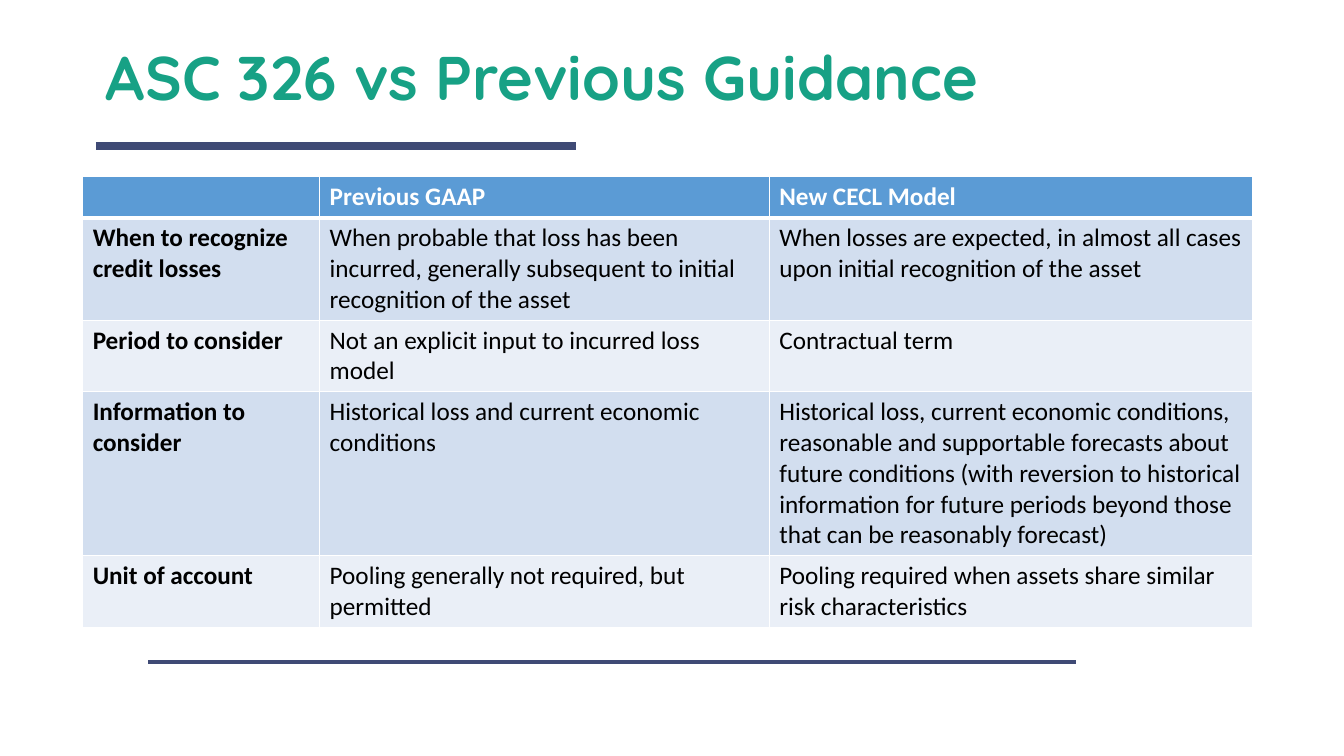
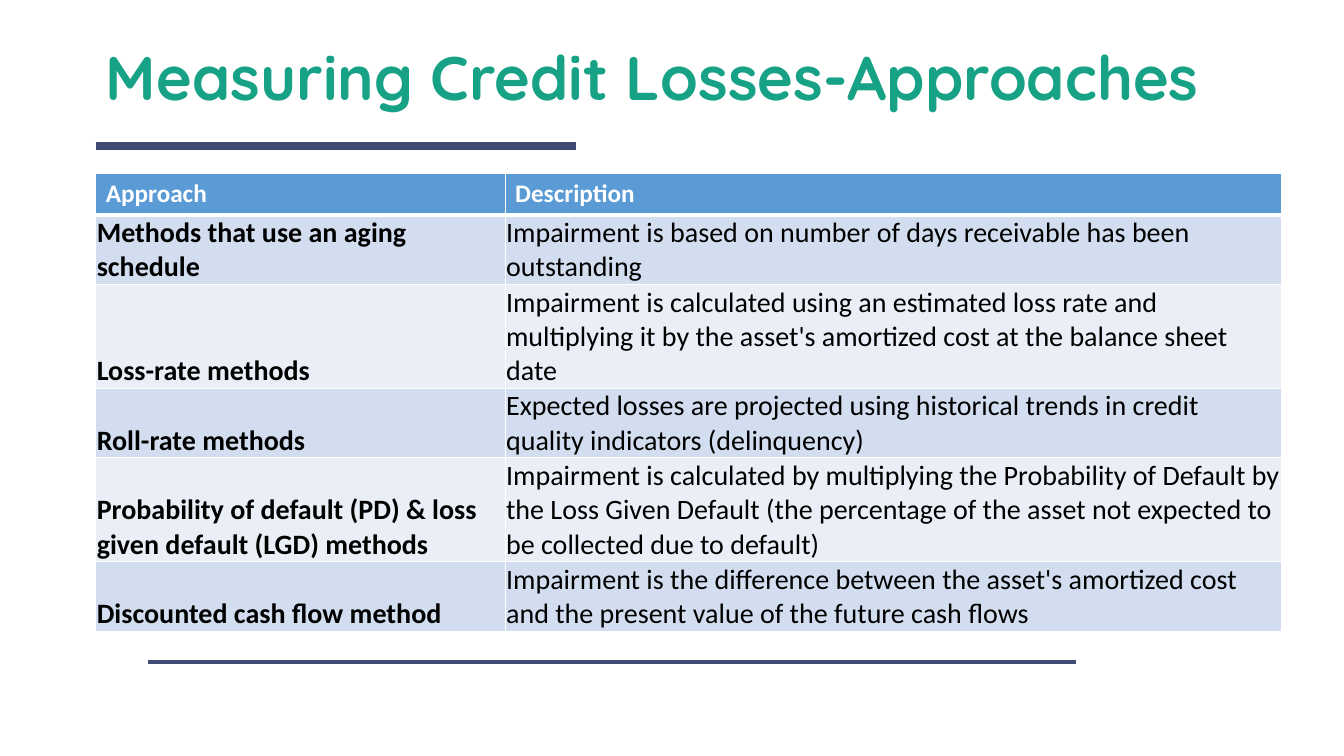
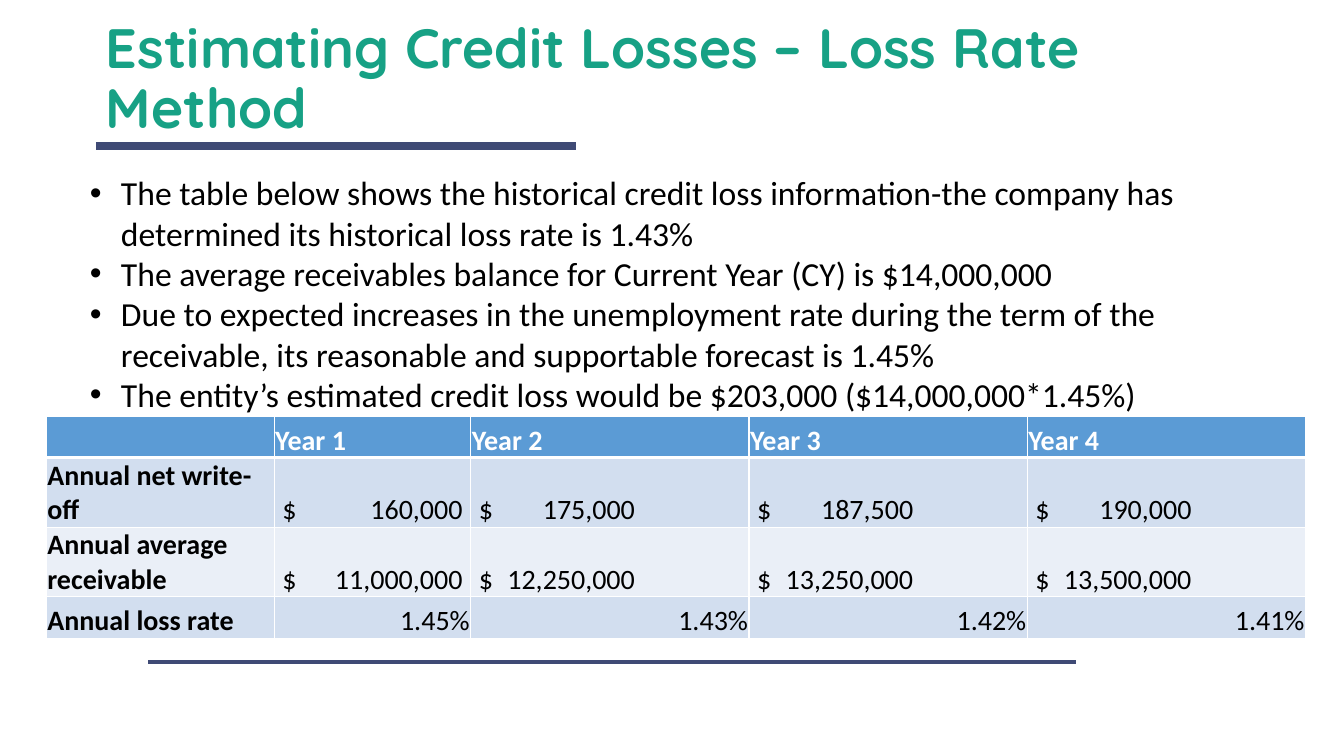
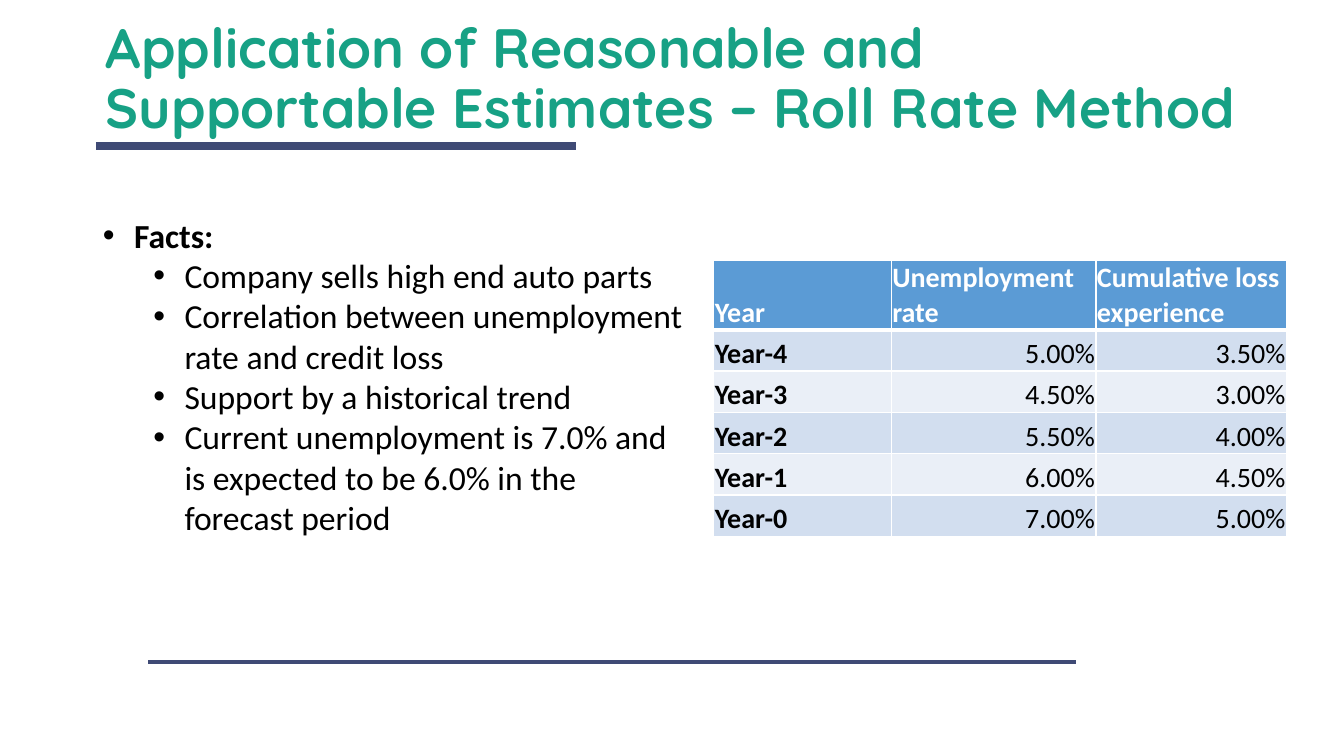
from dataclasses import dataclass

import pptx
import pptx.dml.color
import pptx.enum.shapes
import pptx.enum.text
import pptx.oxml
import pptx.oxml.ns
import pptx.util
from lxml import etree

Inches, Pt = pptx.util.Inches, pptx.util.Pt
PP_ALIGN, MSO_ANCHOR = pptx.enum.text.PP_ALIGN, pptx.enum.text.MSO_ANCHOR
qn = pptx.oxml.ns.qn

TITLE_ONLY, TITLE_AND_BODY = 5, 1


@dataclass(frozen=True)
class Theme:
    title_font: str = "Quicksand"
    body_font: str = "Calibri"
    title: str = "17A185"
    rule: str = "3F4A75"
    header: str = "5B9BD5"
    bands: tuple = ("D2DEEF", "EAEFF7")
    white: str = "FFFFFF"
    text: str = "000000"
    title_size: float = 44
    long_title_size: float = 39.6
    body_size: float = 24
    table_size: float = 20
    small_table_size: float = 18


def rgb(value):
    return pptx.dml.color.RGBColor.from_string(value)


def write(paragraph, text, *, size, font, color, bold=False, align=PP_ALIGN.LEFT):
    paragraph.alignment = align
    run = paragraph.add_run()
    run.text = text
    run.font.size = Pt(size)
    run.font.name = font
    run.font.bold = bold
    run.font.color.rgb = rgb(color)


def place(shape, left, top, width, height):
    shape.left, shape.top = Inches(left), Inches(top)
    shape.width, shape.height = Inches(width), Inches(height)


def add_bullet(paragraph, indent, hanging=0.31):
    properties = paragraph._p.get_or_add_pPr()
    properties.set("marL", str(Inches(indent)))
    properties.set("indent", str(-Inches(hanging)))
    etree.SubElement(properties, qn("a:buFont")).set("typeface", "Arial")
    etree.SubElement(properties, qn("a:buChar")).set("char", "•")


def add_right_tab(paragraph, position):
    tabs = etree.SubElement(paragraph._p.get_or_add_pPr(), qn("a:tabLst"))
    tab = etree.SubElement(tabs, qn("a:tab"))
    tab.set("pos", str(Inches(position)))
    tab.set("algn", "r")


def add_borders(cell, color, **widths):
    """Draw the cell edges; widths in points are keyed L, R, T and B."""
    properties = cell._tc.get_or_add_tcPr()
    for position, (edge, width) in enumerate(widths.items()):
        line = etree.Element(qn(f"a:ln{edge}"), w=str(Pt(width)))
        fill = etree.SubElement(line, qn("a:solidFill"))
        etree.SubElement(fill, qn("a:srgbClr")).set("val", color)
        properties.insert(position, line)


class Deck:
    """Holds the theme and the slide being built."""

    def __init__(self, theme):
        self.theme = theme
        self.presentation = pptx.Presentation()
        self.presentation.slide_width = Inches(13.33)
        self.presentation.slide_height = Inches(7.5)
        self.slide = None

    def start(self, title, layout=TITLE_ONLY, size=None):
        layouts = self.presentation.slide_layouts
        self.slide = self.presentation.slides.add_slide(layouts[layout])
        self.rule(0.95, 5.71, 1.45, 6)
        self.rule(1.47, 10.67, 6.57, 3)
        heading = self.slide.shapes.title
        place(heading, 0.95, 0.4, 11.47, 0.8)
        frame = heading.text_frame
        frame.auto_size = pptx.enum.text.MSO_AUTO_SIZE.NONE
        frame.vertical_anchor = MSO_ANCHOR.MIDDLE
        paragraph = frame.paragraphs[0]
        paragraph.line_spacing = 0.9
        write(paragraph, title, size=size or self.theme.title_size, bold=True,
              font=self.theme.title_font, color=self.theme.title)

    def rule(self, left, right, y, weight):
        line = self.slide.shapes.add_connector(
            pptx.enum.shapes.MSO_CONNECTOR.STRAIGHT,
            Inches(left), Inches(y), Inches(right), Inches(y))
        line.line.color.rgb = rgb(self.theme.rule)
        line.line.width = Pt(weight)
        etree.SubElement(line._element.spPr, qn("a:effectLst"))

    def bullets(self, box, items):
        """Fill the body placeholder with (level, text, bold) items."""
        body = self.slide.placeholders[1]
        place(body, *box)
        frame = body.text_frame
        frame.auto_size = pptx.enum.text.MSO_AUTO_SIZE.NONE
        frame.vertical_anchor = MSO_ANCHOR.TOP
        for index, (level, text, bold) in enumerate(items):
            paragraph = frame.add_paragraph() if index else frame.paragraphs[0]
            paragraph.level = level
            add_bullet(paragraph, 0.31 + 0.5 * level)
            paragraph.space_before = Pt(0)
            write(paragraph, text, size=self.theme.body_size, bold=bold,
                  font=self.theme.body_font, color=self.theme.text)

    def table(self, left, top, widths, rows, size=None, header_size=None,
              tight_from=0):
        """Add a banded table; rows from tight_from on have slim margins."""
        size = size or self.theme.table_size
        row_height = 0.41
        grid = self.slide.shapes.add_table(
            len(rows), len(widths), Inches(left), Inches(top),
            Inches(sum(widths)), Inches(row_height * len(rows))).table
        for column, width in zip(grid.columns, widths):
            column.width = Inches(width)
        for r, row in enumerate(rows):
            grid.rows[r].height = Inches(row_height)
            for c, text in enumerate(row):
                self.cell(grid.cell(r, c), text, r, c, widths[c],
                          size if r else header_size or size,
                          tight=r >= tight_from)

    def cell(self, cell, text, row, column, width, size, tight):
        theme = self.theme
        cell.fill.solid()
        cell.fill.fore_color.rgb = rgb(
            theme.bands[(row - 1) % 2] if row else theme.header)
        add_borders(cell, theme.white, L=1, R=1, T=3 if row == 1 else 1,
                    B=1 if row else 3)
        if not text:
            return
        paragraph = cell.text_frame.paragraphs[0]
        if tight:
            cell.vertical_anchor = MSO_ANCHOR.BOTTOM
            cell.margin_left = cell.margin_right = cell.margin_top = Inches(0.01)
            cell.margin_bottom = 0
        if text.startswith("$"):
            cell.margin_left = Inches(0.08)
            add_right_tab(paragraph, 1.79 if width < 2 else 1.55)
        write(paragraph, text, size=size, font=theme.body_font,
              color=theme.text if row else theme.white,
              bold=row == 0 or column == 0,
              align=PP_ALIGN.RIGHT if text.endswith("%") else PP_ALIGN.LEFT)


def main():
    theme = Theme()
    deck = Deck(theme)

    deck.start("ASC 326 vs Previous Guidance")
    deck.table(0.82, 1.75, [2.35, 4.46, 4.79], [
        ("", "Previous GAAP", "New CECL Model"),
        ("When to recognize credit losses",
         "When probable that loss has been incurred, generally subsequent to "
         "initial recognition of the asset",
         "When losses are expected, in almost all cases upon initial "
         "recognition of the asset"),
        ("Period to consider",
         "Not an explicit input to incurred loss model",
         "Contractual term"),
        ("Information to consider",
         "Historical loss and current economic conditions",
         "Historical loss, current economic conditions, reasonable and "
         "supportable forecasts about future conditions (with reversion to "
         "historical information for future periods beyond those that can be "
         "reasonably forecast)"),
        ("Unit of account",
         "Pooling generally not required, but permitted",
         "Pooling required when assets share similar risk characteristics"),
    ], size=theme.small_table_size, tight_from=5)

    deck.start("Measuring Credit Losses-Approaches")
    deck.table(0.95, 1.72, [4.06, 7.7], [
        ("Approach", "Description"),
        ("Methods that use an aging schedule",
         "Impairment is based on number of days receivable has been "
         "outstanding"),
        ("Loss-rate methods",
         "Impairment is calculated using an estimated loss rate and "
         "multiplying it by the asset's amortized cost at the balance sheet "
         "date"),
        ("Roll-rate methods",
         "Expected losses are projected using historical trends in credit "
         "quality indicators (delinquency)"),
        ("Probability of default (PD) & loss given default (LGD) methods",
         "Impairment is calculated by multiplying the Probability of Default "
         "by the Loss Given Default (the percentage of the asset not expected "
         "to be collected due to default)"),
        ("Discounted cash flow method",
         "Impairment is the difference between the asset's amortized cost and "
         "the present value of the future cash flows"),
    ], header_size=theme.small_table_size, tight_from=1)

    deck.start("Estimating Credit Losses – Loss Rate Method",
               TITLE_AND_BODY, theme.long_title_size)
    deck.bullets((0.79, 1.66, 11.47, 2.52), [
        (0, "The table below shows the historical credit loss information-the "
            "company has determined its historical loss rate is 1.43%", False),
        (0, "The average receivables balance for Current Year (CY) is "
            "$14,000,000", False),
        (0, "Due to expected increases in the unemployment rate during the "
            "term of the receivable, its reasonable and supportable forecast "
            "is 1.45%", False),
        (0, "The entity’s estimated credit loss would be $203,000 "
            "($14,000,000*1.45%)", False),
    ])
    deck.table(0.46, 4.13, [2.26, 1.95, 2.76, 2.76, 2.76], [
        ("", "Year 1", "Year 2", "Year 3", "Year 4"),
        ("Annual net write-off",
         "$\t160,000", "$\t175,000", "$\t187,500", "$\t190,000"),
        ("Annual average receivable",
         "$\t11,000,000", "$\t12,250,000", "$\t13,250,000", "$\t13,500,000"),
        ("Annual loss rate", "1.45%", "1.43%", "1.42%", "1.41%"),
    ])

    deck.start("Application of Reasonable and Supportable Estimates – Roll "
               "Rate Method", TITLE_AND_BODY, theme.long_title_size)
    deck.bullets((0.92, 2.08, 6.01, 3.33), [
        (0, "Facts:", True),
        (1, "Company sells high end auto parts", False),
        (1, "Correlation between unemployment rate and credit loss", False),
        (1, "Support by a historical trend", False),
        (1, "Current unemployment is 7.0% and is expected to be 6.0% in the "
            "forecast period", False),
    ])
    deck.table(7.08, 2.58, [1.76, 2.03, 1.89], [
        ("Year", "Unemployment rate", "Cumulative loss experience"),
        ("Year-4", "5.00%", "3.50%"),
        ("Year-3", "4.50%", "3.00%"),
        ("Year-2", "5.50%", "4.00%"),
        ("Year-1", "6.00%", "4.50%"),
        ("Year-0", "7.00%", "5.00%"),
    ])

    deck.presentation.save("out.pptx")


if __name__ == "__main__":
    main()
